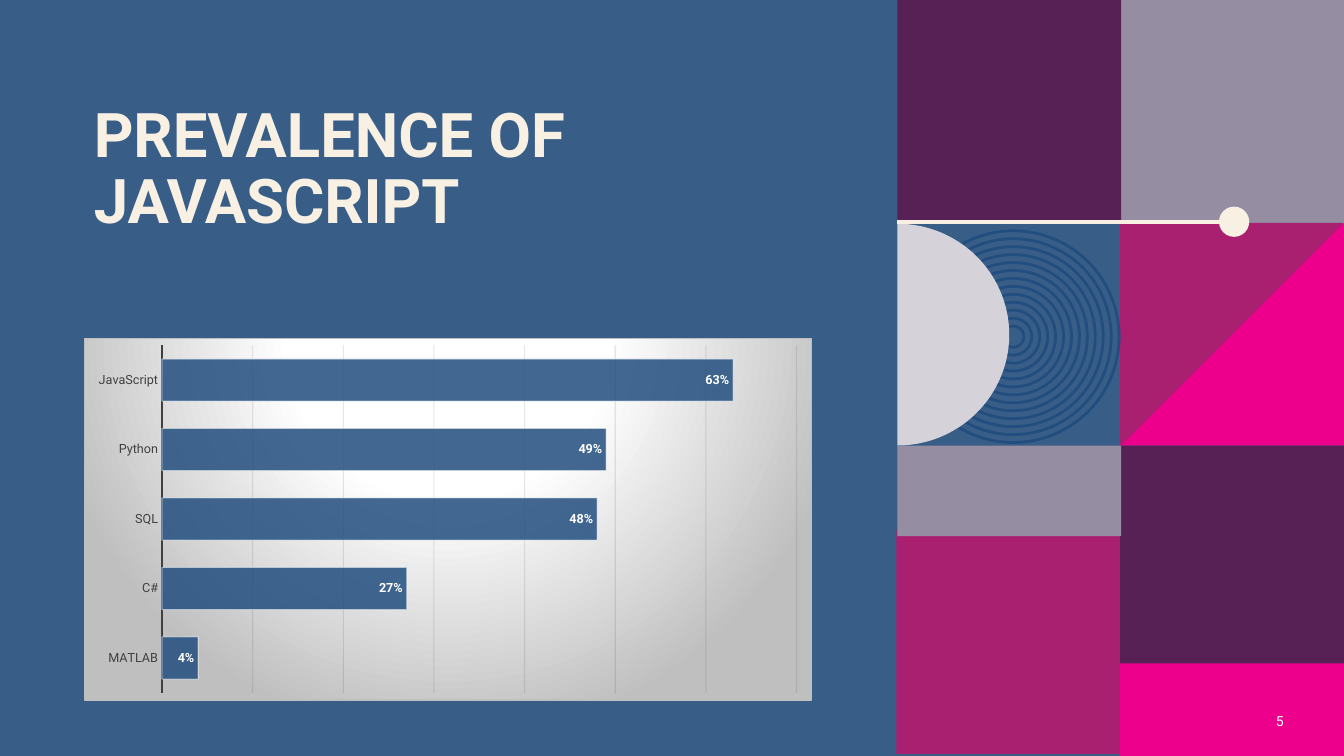
import math
from dataclasses import dataclass

from lxml import etree
from pptx import Presentation
from pptx.chart.data import CategoryChartData
from pptx.dml.color import RGBColor
from pptx.enum.chart import XL_CHART_TYPE, XL_LABEL_POSITION, XL_TICK_MARK
from pptx.enum.shapes import MSO_CONNECTOR, MSO_SHAPE
from pptx.enum.text import MSO_ANCHOR, MSO_AUTO_SIZE, PP_ALIGN
from pptx.oxml import parse_xml
from pptx.oxml.ns import nsdecls, qn
from pptx.util import Inches, Pt

BAR = XL_CHART_TYPE.BAR_CLUSTERED
INSIDE_END = XL_LABEL_POSITION.INSIDE_END
NO_TICK = XL_TICK_MARK.NONE
STRAIGHT = MSO_CONNECTOR.STRAIGHT
RECTANGLE, OVAL = MSO_SHAPE.RECTANGLE, MSO_SHAPE.OVAL
TOP, MIDDLE = MSO_ANCHOR.TOP, MSO_ANCHOR.MIDDLE
LEFT, RIGHT = PP_ALIGN.LEFT, PP_ALIGN.RIGHT
NO_AUTOFIT = MSO_AUTO_SIZE.NONE


@dataclass(frozen=True)
class Theme:
    font: str = "Roboto"
    background: str = "385E88"
    cream: str = "F8F0E3"
    white: str = "FFFFFF"
    black: str = "000000"
    plum: str = "582156"
    berry: str = "AA2070"
    pink: str = "EC008C"
    mauve: str = "958EA2"
    mist: str = "D5D2DA"
    navy: str = "224E7F"
    charcoal: str = "404040"
    grid: str = "0D0D0D"
    silver: str = "BFBFBF"
    title_size: int = 44
    number_size: float = 10
    chart_size: float = 10
    label_size: float = 9


def apply_format(target, values):
    for name, value in values.items():
        setattr(target, name, value)


def set_alpha(line_or_fill_element, percent):
    """Make the solid colour inside an element partly transparent."""
    color = next(line_or_fill_element.iter(qn("a:srgbClr")))
    etree.SubElement(color, qn("a:alpha")).set("val", str(percent * 1000))


class SlideBuilder:
    def __init__(self, slide, theme):
        self.slide, self.theme = slide, theme
        background = slide.background.fill
        background.solid()
        background.fore_color.rgb = RGBColor.from_string(theme.background)

    def style_font(self, font, size, color, bold=False):
        apply_format(font, {"name": self.theme.font, "size": Pt(size), "bold": bold})
        font.color.rgb = RGBColor.from_string(color)

    def style_line(self, line, color, width):
        line.color.rgb = RGBColor.from_string(color)
        line.width = Pt(width)

    def paint(self, shape, fill=None, outline=None, width=2):
        shape.shadow.inherit = False
        if fill:
            shape.fill.solid()
            shape.fill.fore_color.rgb = RGBColor.from_string(fill)
        else:
            shape.fill.background()
        if outline:
            self.style_line(shape.line, outline, width)
        else:
            shape.line.fill.background()

    def shape(self, preset, box, **paint):
        self.paint(self.slide.shapes.add_shape(preset, *map(Inches, box)), **paint)

    def polygon(self, points, fill):
        start, *rest = [(Inches(x), Inches(y)) for x, y in points]
        outline = self.slide.shapes.build_freeform(*start)
        outline.add_line_segments(rest, close=True)
        self.paint(outline.convert_to_shape(), fill)

    def line(self, start, end, color, width):
        rule = self.slide.shapes.add_connector(STRAIGHT, *map(Inches, start + end))
        self.style_line(rule.line, color, width)
        etree.SubElement(rule._element.spPr, qn("a:effectLst"))

    def set_text(self, holder, text, size, color, anchor, align, bold=False, spacing=1.0):
        frame = holder.text_frame
        frame.text = text
        apply_format(frame, {"word_wrap": True, "auto_size": NO_AUTOFIT,
                             "vertical_anchor": anchor})
        paragraph = frame.paragraphs[0]
        apply_format(paragraph, {"alignment": align, "line_spacing": spacing})
        self.style_font(paragraph.runs[0].font, size, color, bold)

    def title(self, text, box):
        holder = self.slide.shapes.title
        apply_format(holder, dict(zip(("left", "top", "width", "height"), map(Inches, box))))
        self.set_text(holder, text, self.theme.title_size, self.theme.cream, TOP, LEFT, True, 0.9)

    def slide_number(self, text, box):
        holder = self.slide.shapes.add_textbox(*map(Inches, box))
        self.set_text(holder, text, self.theme.number_size, self.theme.white, MIDDLE, RIGHT)

    def bar_chart(self, shares, box):
        theme = self.theme
        data = CategoryChartData(number_format="0%")
        data.categories = list(shares)
        data.add_series("Series 1", list(shares.values()))
        chart = self.slide.shapes.add_chart(BAR, *map(Inches, box), data).chart
        apply_format(chart, {"has_title": False, "has_legend": False})
        self.style_font(chart.font, theme.chart_size, theme.black)

        # Axes
        languages, usage = chart.category_axis, chart.value_axis
        apply_format(languages, {"major_tick_mark": NO_TICK, "minor_tick_mark": NO_TICK,
                                 "has_major_gridlines": False})
        self.style_font(languages.tick_labels.font, theme.label_size, theme.charcoal)
        self.style_line(languages.format.line, theme.charcoal, 1.5)
        apply_format(usage, {"minimum_scale": 0, "maximum_scale": 0.7, "major_unit": 0.1,
                             "has_major_gridlines": True, "visible": False})
        gridlines = usage.major_gridlines
        self.style_line(gridlines.format.line, theme.grid, 0.75)
        set_alpha(usage._element.find(qn("c:majorGridlines")), 10)

        # Bars and their labels
        plot = chart.plots[0]
        apply_format(plot, {"gap_width": 65, "vary_by_categories": False})
        bars = plot.series[0]
        bars.format.fill.solid()
        bars.format.fill.fore_color.rgb = RGBColor.from_string(theme.navy)
        self.style_line(bars.format.line, theme.white, 0.75)
        bar_style = bars._element.find(qn("c:spPr"))
        set_alpha(bar_style.find(qn("a:solidFill")), 85)
        set_alpha(bar_style.find(qn("a:ln")), 50)
        labels = bars.data_labels
        apply_format(labels, {"show_value": True, "position": INSIDE_END,
                              "number_format": "0%", "number_format_is_linked": False})
        self.style_font(labels.font, theme.label_size, theme.white, True)

        # Radial backdrop with a thin border
        stops = "".join(
            f'<a:gs pos="{position * 1000}"><a:srgbClr val="{color}"/></a:gs>'
            for position, color in ((0, theme.white), (39, theme.white), (100, theme.silver)))
        backdrop = parse_xml(
            f'<c:spPr {nsdecls("c", "a")}><a:gradFill><a:gsLst>{stops}</a:gsLst>'
            '<a:path path="circle"><a:fillToRect l="50000" t="-80000" r="50000" b="180000"/>'
            f'</a:path></a:gradFill><a:ln w="{Pt(0.75)}"><a:solidFill>'
            f'<a:srgbClr val="{theme.silver}"/></a:solidFill></a:ln></c:spPr>')
        chart._chartSpace.find(qn("c:chart")).addnext(backdrop)


def main():
    theme = Theme()
    deck = Presentation()
    apply_format(deck, {"slide_width": Inches(13.33), "slide_height": Inches(7.5)})
    page = SlideBuilder(deck.slides.add_slide(deck.slide_layouts[5]), theme)

    # Colour tiles in two columns
    tile, left_column, right_column = 2.22, 8.9, 11.11
    for left, top, height, color in (
        (right_column, 2.2, tile, theme.pink),
        (right_column, 0, tile, theme.mauve),
        (left_column, 0, 2.21, theme.plum),
        (8.89, 5.26, tile, theme.berry),
        (right_column, 4.42, tile, theme.plum),
        (right_column, 6.58, 0.92, theme.pink),
    ):
        page.shape(RECTANGLE, (left, top, tile, height), fill=color)
    page.polygon([(13.33, 2.21), (right_column, 4.43), (right_column, 2.21)], theme.berry)

    # Concentric rings
    ring_count, outer, inner = 13, 2.1, 0.21
    for ring in range(ring_count):
        size = outer - ring * (outer - inner) / (ring_count - 1)
        page.shape(OVAL, (10.05 - size / 2, 3.34 - size / 2, size, size), outline=theme.navy)

    # Band and half disc
    page.shape(RECTANGLE, (left_column, 4.42, tile, 0.9), fill=theme.mauve)
    arc = [math.radians(angle) for angle in range(-90, 91, 2)]
    page.polygon([(left_column + 1.11 * math.cos(a), 3.32 + 1.1 * math.sin(a)) for a in arc],
                 theme.mist)

    # Rule with a round end
    page.line((left_column, 2.2), (12.23, 2.2), theme.cream, 3)
    page.shape(OVAL, (12.09, 2.05, 0.3, 0.3), fill=theme.cream)

    # Content
    page.title("PREVALENCE OF JAVASCRIPT", (0.83, 0.98, 7.21, 2.17))
    page.slide_number("5", (12.33, 6.95, 0.5, 0.4))
    page.bar_chart({"MATLAB": 0.04, "C#": 0.27, "SQL": 0.48, "Python": 0.49,
                    "JavaScript": 0.63}, (0.83, 3.35, 7.22, 3.6))

    deck.save("out.pptx")


if __name__ == "__main__":
    main()
